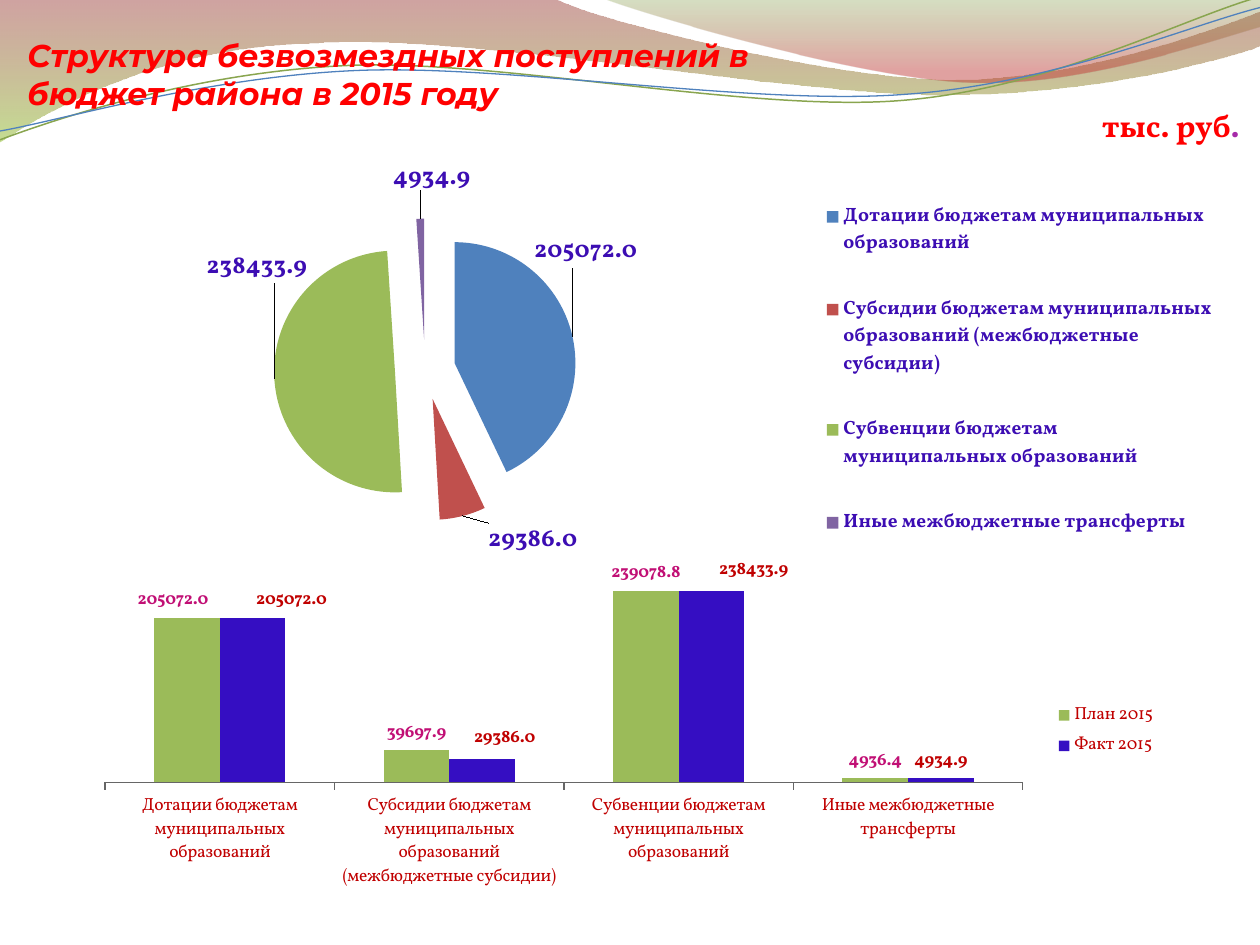
from lxml import etree
from pptx import Presentation
from pptx.chart.data import CategoryChartData
from pptx.dml.color import RGBColor
from pptx.enum.chart import XL_CHART_TYPE, XL_LABEL_POSITION, XL_LEGEND_POSITION, XL_TICK_MARK
from pptx.enum.text import MSO_ANCHOR, PP_ALIGN
from pptx.oxml import parse_xml
from pptx.oxml.ns import qn
from pptx.util import Cm, Pt

PIE, COLUMNS = XL_CHART_TYPE.PIE, XL_CHART_TYPE.COLUMN_CLUSTERED
OUTSIDE, RIGHT = XL_LABEL_POSITION.OUTSIDE_END, XL_LEGEND_POSITION.RIGHT
OUT_TICK, NO_TICK = XL_TICK_MARK.OUTSIDE, XL_TICK_MARK.NONE
MIDDLE, LEFT, CENTER = MSO_ANCHOR.MIDDLE, PP_ALIGN.LEFT, PP_ALIGN.CENTER
C_NS = "http://schemas.openxmlformats.org/drawingml/2006/chart"
rgb = RGBColor.from_string


def manual_layout(inner=False, **values):
    target = '<c:layoutTarget val="inner"/>' if inner else ""
    modes = '<c:xMode val="edge"/><c:yMode val="edge"/>' if "w" in values else ""
    numbers = "".join(f'<c:{k} val="{v}"/>' for k, v in values.items())
    return parse_xml(f'<c:layout xmlns:c="{C_NS}"><c:manualLayout>'
                     f'{target}{modes}{numbers}</c:manualLayout></c:layout>')


def label_series(series, size, color, offsets, leaders):
    labels = series.data_labels
    labels.show_value = True
    labels.number_format, labels.number_format_is_linked = "0.0", False
    labels.position = OUTSIDE
    fonts = [labels.font]
    for i in offsets:
        label = series.points[i].data_label
        fonts.append(label.font)
        label.position = OUTSIDE
    for font in fonts:
        font.size, font.bold, font.name = Pt(size), True, "Vollkorn"
        font.color.rgb = rgb(color)
    for element in series._element.iter(qn("c:dLbl")):
        x, y = offsets[int(element.find(qn("c:idx")).get("val"))]
        element.insert(1, manual_layout(x=x, y=y))
        number_format = etree.Element(qn("c:numFmt"), formatCode="0.0", sourceLinked="0")
        element.insert(2, number_format)
    for element in series._element.iter(qn("c:showLeaderLines")):
        element.set("val", leaders)


prs = Presentation()
prs.slide_width, prs.slide_height = Cm(25.4), Cm(19.05)
s = prs.slides.add_slide(prs.slide_layouts[5])

WAVES = [
    ([(0, 0), (4.4, -0.01), (4.76, 0.17, 6.64, 0.63, 7.58, 0.63),
      (8.53, 0.63, 9.58, 0.26, 10, 0.09), (10.01, 0.36),
      (9.83, 0.44, 8.7, 0.76, 7.46, 0.75), (6.22, 0.75, 3.82, 0.28, 2.57, 0.34),
      (1.29, 0.36, 0.46, 0.83, -0.01, 1.13), (0, 0)],
     [(0, "973330", 45), (1, "95C238", 55)], None),
    ([(4.79, -0.01), (5.09, 0.11, 6.82, 0.62, 7.69, 0.65),
      (8.56, 0.69, 9.61, 0.32, 10, 0.21), (10, 0), (4.79, -0.01)],
     [(0, "769537", 30), (0.8, "BE3330", 45)], None),
    ([(0, 1.11), (0.48, 0.93, 1.58, 0.57, 2.77, 0.52),
      (3.95, 0.47, 5.93, 0.89, 7.13, 0.8), (8.33, 0.71, 9.38, 0.15, 9.98, -0.02)],
     None, ("89A54F", 0.85)),
    ([(0, 1.04), (0.47, 0.96, 1.64, 0.61, 2.83, 0.56),
      (4.03, 0.51, 5.97, 0.84, 7.17, 0.75), (8.36, 0.67, 9.41, 0.21, 10, 0.06)],
     None, ("4F81BD", 0.75)),
]
for segments, stops, line in WAVES:
    points = [(round(seg[i] * 1000), round(seg[i + 1] * 1000))
              for seg in segments for i in range(0, len(seg), 2)]
    builder = s.shapes.build_freeform(*points[0], scale=Cm(2.54) / 1000)
    builder.add_line_segments(points[1:], close=bool(stops))
    wave = builder.convert_to_shape()
    wave.shadow.inherit = False
    steps = iter(list(wave._element.iter(qn("a:lnTo"))))
    for seg in segments[1:]:
        first = next(steps)
        if len(seg) == 6:
            first.addprevious(curve := etree.Element(qn("a:cubicBezTo")))
            for step in (first, next(steps), next(steps)):
                curve.append(step[0])
                step.getparent().remove(step)
    if stops:
        wave.line.fill.background()
        wave.fill.gradient()
        wave.fill.gradient_angle = 270
        for stop, (position, color, opacity) in zip(wave.fill.gradient_stops, stops):
            stop.position = position
            stop.color.rgb = rgb(color)
        for element, (_, _, opacity) in zip(wave._element.iter(qn("a:srgbClr")), stops):
            etree.SubElement(element, qn("a:alpha"), val=str(opacity * 1000))
    else:
        wave.fill.background()
        wave.line.color.rgb = rgb(line[0])
        wave.line.width = Pt(line[1])

title = s.shapes.title
title._element.getparent().append(title._element)
title.left, title.top, title.width, title.height = Cm(0.3), Cm(0.38), Cm(15.6), Cm(2.21)
unit = s.shapes.add_textbox(Cm(21.8), Cm(1.78), Cm(3.61), Cm(1.47))
TEXTS = [
    (title, LEFT, "Montserrat", True,
     [("Структура безвозмездных поступлений в бюджет района в 2015 году", "FF0000")]),
    (unit, CENTER, "Vollkorn", False, [("тыс. руб", "FF0000"), (".", "A62AA9")]),
]
for sp, align, font_name, italic, runs in TEXTS:
    tf = sp.text_frame
    tf.word_wrap = True
    tf.vertical_anchor = MIDDLE
    p = tf.paragraphs[0]
    p.alignment = align
    for text, color in runs:
        r = p.add_run()
        r.text = text
        r.font.name, r.font.size = font_name, Pt(18)
        r.font.bold, r.font.italic = True, italic
        r.font.color.rgb = rgb(color)

CATEGORIES = [
    "Дотации бюджетам муниципальных образований",
    "Субсидии бюджетам муниципальных образований (межбюджетные субсидии)",
    "Субвенции бюджетам муниципальных образований",
    "Иные межбюджетные трансферты",
]
PLAN = [205072, 39697.9, 239078.8, 4936.4]
FACT = [205072, 29386, 238433.9, 4934.9]
CHARTS = [
    (PIE, (0.71, 3.25, 24, 8.41), [("Series 1", FACT)], (11, "3C0DB3", True),
     dict(x=0.226, y=0.21, w=0.203, h=0.58), dict(x=0.662, y=0.01, w=0.33, h=0.98)),
    (COLUMNS, (1.77, 10.92, 21.79, 7.62), [("План 2015", PLAN), ("Факт 2015", FACT)],
     (10, "C00000", False),
     dict(x=0.016, y=0, w=0.849, h=0.637), dict(x=0.887, y=0.41, w=0.11, h=0.18)),
]
charts = []
for kind, box, series_list, (size, color, bold), plot_box, legend_box in CHARTS:
    data = CategoryChartData(number_format="0.0")
    data.categories = CATEGORIES
    for name, values in series_list:
        data.add_series(name, values)
    chart = s.shapes.add_chart(kind, *(Cm(v) for v in box), data).chart
    chart.has_title = False
    chart.font.name, chart.font.size = "Vollkorn", Pt(10)
    chart.has_legend = True
    legend = chart.legend
    legend.position, legend.include_in_layout = RIGHT, False
    legend.font.name, legend.font.size, legend.font.bold = "Vollkorn", Pt(size), bold
    legend.font.color.rgb = rgb(color)
    plot_area = chart._chartSpace.chart.plotArea
    for parent in (plot_area, legend._element):
        for old in parent.findall(qn("c:layout")):
            parent.remove(old)
    plot_area.insert(0, manual_layout(inner=True, **plot_box))
    legend._element.find(qn("c:legendPos")).addnext(manual_layout(**legend_box))
    charts.append(chart)
pie, columns = charts

slices = pie.plots[0].series[0]
for i, color in enumerate(["4F81BD", "C0504D", "9BBB59", "8064A2"]):
    fill = slices.points[i].format.fill
    fill.solid()
    fill.fore_color.rgb = rgb(color)
for element in slices._element.findall(qn("c:dPt")):
    explosion = etree.Element(qn("c:explosion"), val="25")
    element.find(qn("c:spPr")).addprevious(explosion)
label_series(slices, 14, "3C0DB3",
             {0: (-0.038, -0.16), 1: (0.02, 0), 2: (0.034, -0.27), 3: (0.01, -0.05)}, "1")

plot = columns.plots[0]
plot.gap_width, plot.overlap, plot.vary_by_categories = 150, 0, False
COLUMN_STYLES = [
    ("9BBB59", "C10F75", {0: (-0.013, 0)}),
    ("350EC2", "C00000", {0: (0.036, 0), 1: (0.021, -0.01), 2: (0.039, -0.01)}),
]
for series, (color, label_color, offsets) in zip(plot.series, COLUMN_STYLES):
    series.format.fill.solid()
    series.format.fill.fore_color.rgb = rgb(color)
    label_series(series, 10, label_color, offsets, "0")
value_axis, category_axis = columns.value_axis, columns.category_axis
value_axis.visible = value_axis.has_major_gridlines = False
value_axis.minimum_scale, value_axis.maximum_scale = 0, 300000
category_axis.major_tick_mark, category_axis.minor_tick_mark = OUT_TICK, NO_TICK
category_axis.format.line.color.rgb = rgb("666666")
category_axis.tick_labels.font.size = Pt(10)
category_axis.tick_labels.font.name = "Vollkorn"
category_axis.tick_labels.font.color.rgb = rgb("C00000")

prs.save("out.pptx")
